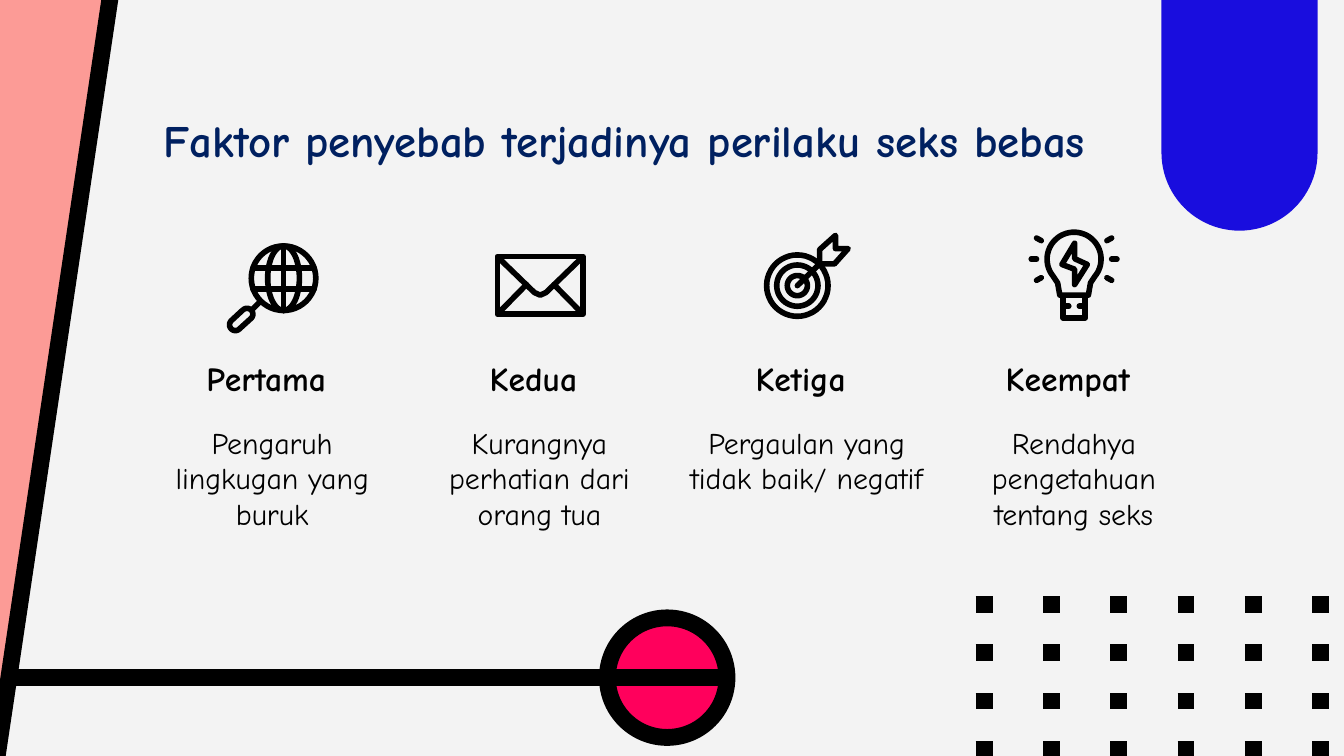
"""Build a slide on four causes, each with a line icon, a heading and a description."""
from math import cos, radians, sin

from lxml import etree
from pptx import Presentation
from pptx.dml.color import RGBColor
from pptx.enum.shapes import MSO_CONNECTOR, MSO_SHAPE
from pptx.enum.text import MSO_ANCHOR, MSO_AUTO_SIZE, PP_ALIGN
from pptx.oxml.ns import qn
from pptx.util import Cm, Pt

STRAIGHT = MSO_CONNECTOR.STRAIGHT
OVAL = MSO_SHAPE.OVAL
ROUND_TOP = MSO_SHAPE.ROUND_2_SAME_RECTANGLE
TOP, MIDDLE, BOTTOM = MSO_ANCHOR.TOP, MSO_ANCHOR.MIDDLE, MSO_ANCHOR.BOTTOM
CENTER = PP_ALIGN.CENTER
NO_FIT = MSO_AUTO_SIZE.NONE

BLACK, NAVY = "000000", "002060"
COMPARISON_LAYOUT = 4
rgb = RGBColor.from_string


def paint(shape, fill=None, width=None):
    """Set a solid fill, a black outline and no shadow."""
    if fill:
        shape.fill.solid()
        shape.fill.fore_color.rgb = rgb(fill)
    if width:
        shape.line.color.rgb = rgb(BLACK)
        shape.line.width = Pt(width)
    else:
        shape.line.fill.background()
    etree.SubElement(shape._element.spPr, qn("a:effectLst"))


def arc(x, y, x_radius, y_radius, start=0, end=360):
    """Return points along an elliptical arc, clockwise in degrees."""
    angles = [radians(start + (end - start) * step / 48) for step in range(49)]
    return [(x + x_radius * cos(a), y + y_radius * sin(a)) for a in angles]


deck = Presentation()
deck.slide_width, deck.slide_height = Cm(25.4), Cm(14.29)
page = deck.slides.add_slide(deck.slide_layouts[COMPARISON_LAYOUT])
page.background.fill.solid()
page.background.fill.fore_color.rgb = rgb("F3F3F3")
shapes = page.shapes

wedge_points = [(2.08, -0.28), (-0.08, 14.6), (-0.51, 14.6), (-0.51, -0.28)]
corners = [(Cm(x), Cm(y)) for x, y in wedge_points]
builder = shapes.build_freeform(*corners[0])
builder.add_line_segments(corners[1:], close=True)
paint(builder.convert_to_shape(), "FC9B96")

ball = shapes.add_shape(OVAL, Cm(11.48), Cm(11.68), Cm(2.26), Cm(2.26))
paint(ball, "FF005C", 9)

pill = shapes.add_shape(ROUND_TOP, Cm(21.95), Cm(-0.03), Cm(2.95), Cm(4.39))
pill.adjustments[0], pill.adjustments[1] = 0.5, 0
pill.rotation = 180
paint(pill, "190DDE")

solid_lines = [(2.18, -0.71, -0.15, 14.94), (13.74, 12.81, 0.3, 12.81)]
dotted_lines = [(18.44, 11.43 + 0.91 * row, 25.4, 11.43 + 0.91 * row) for row in range(4)]
for ends in solid_lines + dotted_lines:
    line = shapes.add_connector(STRAIGHT, *[Cm(value) for value in ends])
    paint(line, width=9)
    if ends in dotted_lines:
        outline = line._element.spPr.find(qn("a:ln"))
        etree.SubElement(outline, qn("a:prstDash"), val="dot")

globe = [
    arc(5.36, 5.26, 0.61, 0.61),
    arc(5.36, 5.26, 0.3, 0.61),
    [(5.36, 4.65), (5.36, 5.87)],
    [(4.78, 5.07), (5.94, 5.07)],
    [(4.78, 5.46), (5.94, 5.46)],
    [(4.92, 5.7), (4.76, 5.86)],
    arc(4.67, 5.94, 0.11, 0.11, -135, 45) + arc(4.45, 6.14, 0.11, 0.11, 45, 225)
    + [(4.59, 5.86)],
]
envelope = [
    [(9.4, 4.85), (11.02, 4.85), (11.02, 5.94), (9.4, 5.94), (9.4, 4.85)],
    [(9.45, 4.9), (10.1, 5.53), (10.21, 5.58), (10.32, 5.53), (10.97, 4.9)],
    [(9.45, 5.89), (9.95, 5.38)],
    [(10.97, 5.89), (10.47, 5.38)],
]
target = [arc(15.07, 5.4, radius, radius) for radius in (0.19, 0.39, 0.58)] + [
    [(15.07, 5.4), (15.49, 4.99)],
    [(15.49, 4.99), (15.49, 4.72), (15.79, 4.45), (15.79, 4.7),
     (16.03, 4.7), (15.77, 4.99), (15.49, 4.99)],
]
bulb = [
    arc(20.3, 4.9, 0.51, 0.51, 140, 400)
    + [(20.61, 5.35), (20.57, 5.58), (20.03, 5.58), (19.99, 5.35), (19.91, 5.23)],
    [(20.09, 5.6), (20.09, 6.01), (20.51, 6.01), (20.51, 5.6)],
    [(20.1, 5.79), (20.2, 5.79)],
    [(20.4, 5.79), (20.5, 5.79)],
    [(20.31, 4.6), (20.07, 5), (20.31, 5.09), (20.31, 5.38),
     (20.55, 5), (20.31, 4.89), (20.31, 4.6)],
]
for side in (-1, 1):
    for near, far, rise in ((0.62, 0.71, -1), (0.71, 0.81, 0), (0.62, 0.71, 1)):
        bulb.append([(20.3 + side * near, 4.9 + rise * 0.35),
                     (20.3 + side * far, 4.9 + rise * 0.4)])

for strokes in (globe, envelope, target, bulb):
    builder = shapes.build_freeform(Cm(strokes[0][0][0]), Cm(strokes[0][0][1]))
    for stroke in strokes:
        points = [(Cm(x), Cm(y)) for x, y in stroke]
        builder.move_to(*points[0])
        builder.add_line_segments(points[1:], close=False)
    icon = builder.convert_to_shape()
    icon.fill.background()
    paint(icon, width=3)
    icon._element.spPr.find(qn("a:ln")).set("cap", "rnd")

causes = [
    ("Pertama ", "Pengaruh lingkugan yang buruk"),
    ("Kedua ", "Kurangnya perhatian dari orang tua"),
    ("Ketiga ", "Pergaulan yang tidak baik/ negatif"),
    ("Keempat ", "Rendahya pengetahuan tentang seks"),
]
texts = [(shapes.title, "Faktor penyebab terjadinya perilaku seks bebas",
          (2.21, 1.73, 19.18, 1.8), MIDDLE, 24, True, NAVY)]
for column, (heading, description) in enumerate(causes):
    left = 2.62 + 5.05 * column
    heading_box = shapes.add_textbox(0, 0, 0, 0)
    body_box = page.placeholders[column + 1]
    texts.append((heading_box, heading, (left, 6.71, 5.05, 1.07), BOTTOM, 18, True, BLACK))
    texts.append((body_box, description, (left, 7.77, 5.05, 2.44), TOP, 16, False, BLACK))

for box, words, place, anchor, size, bold, color in texts:
    box.left, box.top, box.width, box.height = [Cm(value) for value in place]
    frame = box.text_frame
    frame.text = words
    frame.word_wrap = True
    frame.auto_size = NO_FIT
    frame.vertical_anchor = anchor
    frame.margin_left = frame.margin_right = Cm(0.25)
    frame.margin_top = frame.margin_bottom = Cm(0.25)
    para = frame.paragraphs[0]
    para.alignment = CENTER
    para.line_spacing = 1.0
    para.space_before = Pt(0)
    properties = para._p.get_or_add_pPr()
    properties.set("marL", "0")
    properties.set("indent", "0")
    etree.SubElement(properties, qn("a:buNone"))
    para.font.name = "Comic Neue"
    para.font.size = Pt(size)
    para.font.bold = bold
    para.font.color.rgb = rgb(color)

deck.save("out.pptx")
